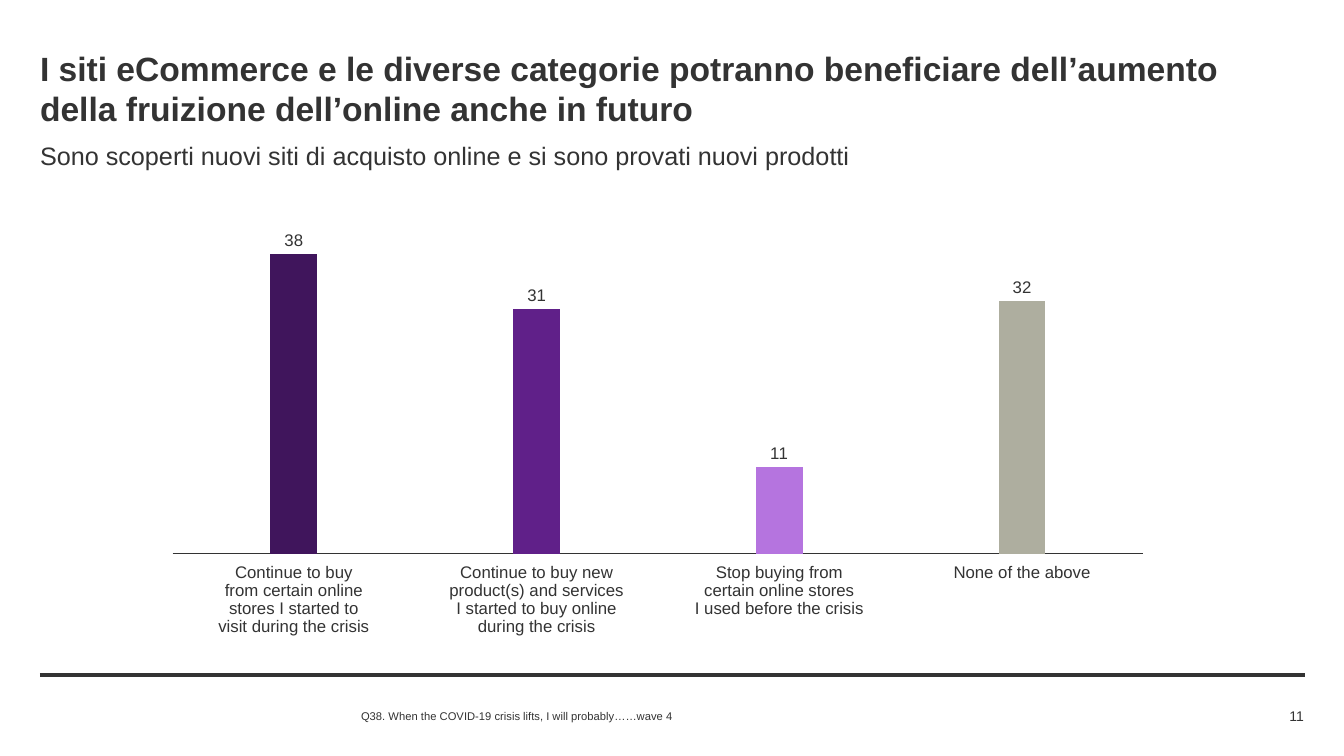
"""Build the slide on how online shopping habits may last after the crisis."""
from lxml.etree import SubElement
from pptx import Presentation
from pptx.chart.data import CategoryChartData
from pptx.dml.color import RGBColor
from pptx.enum.chart import XL_CHART_TYPE as ChartType, XL_LABEL_POSITION as LabelPosition
from pptx.enum.chart import XL_TICK_LABEL_POSITION as TickLabels, XL_TICK_MARK as TickMark
from pptx.enum.shapes import MSO_CONNECTOR as Connector
from pptx.enum.text import MSO_ANCHOR as Anchor, MSO_AUTO_SIZE as AutoSize, PP_ALIGN as Align
from pptx.oxml import parse_xml
from pptx.oxml.ns import nsdecls, qn
from pptx.util import Emu, Pt

THEME = {
    "font": "Arial",
    "ink": RGBColor.from_string("333333"),
    "series": RGBColor.from_string("802AB7"),
    "bars": ["40155C", "602089", "B574DF", "AEAE9F"],
    "title": Pt(24), "subtitle": Pt(18), "chart": Pt(12), "number": Pt(10), "note": Pt(8),
}
PX = 914400 / 100.8


def place(*lengths):
    """Turn pixel lengths into EMU."""
    return [Emu(round(length * PX)) for length in lengths]


def write(box, text, size, bold=False, align=Align.LEFT, anchor=Anchor.TOP):
    """Fill a box with one formatted paragraph."""
    frame = box.text_frame
    frame.word_wrap = True
    frame.auto_size = AutoSize.NONE
    frame.vertical_anchor = anchor
    frame.margin_left = frame.margin_top = frame.margin_right = frame.margin_bottom = 0
    para = frame.paragraphs[0]
    para.alignment = align
    span = para.add_run()
    span.text = text
    span.font.name, span.font.size = THEME["font"], THEME[size]
    span.font.bold, span.font.color.rgb = bold, THEME["ink"]


deck = Presentation()
deck.slide_width, deck.slide_height = place(1344, 756)
page = deck.slides.add_slide(deck.slide_layouts[5])
shapes = page.shapes

rule = shapes.add_connector(Connector.STRAIGHT, *place(40, 675, 1305, 675))
rule.line.color.rgb, rule.line.width = THEME["ink"], Pt(3)
SubElement(rule._element.spPr, qn("a:effectLst"))

title = shapes.title
title.left, title.top, title.width, title.height = place(40, 48, 1264, 80)
write(title, "I siti eCommerce e le diverse categorie potranno beneficiare dell’aumento "
      "della fruizione dell’online anche in futuro", "title", bold=True)

subtitle = shapes.add_textbox(*place(40, 140, 1236, 30))
write(subtitle, "Sono scoperti nuovi siti di acquisto online e si sono provati nuovi prodotti",
      "subtitle")

answers = CategoryChartData(number_format="0")
answers.categories = [
    "Continue to buy\nfrom certain online\nstores I started to\nvisit during the crisis",
    "Continue to buy new\nproduct(s) and services\nI started to buy online\nduring the crisis",
    "Stop buying from\ncertain online stores\nI used before the crisis",
    "None of the above",
]
answers.add_series("Series 1", [38, 31, 11, 32])
chart = shapes.add_chart(ChartType.COLUMN_CLUSTERED, *place(172, 185, 972, 494), answers).chart
chart.has_legend = chart.has_title = False
chart.font.name, chart.font.size = THEME["font"], THEME["chart"]
chart.font.color.rgb = THEME["ink"]

axis = chart.category_axis
axis.major_tick_mark = axis.minor_tick_mark = TickMark.NONE
axis.tick_label_position = TickLabels.LOW
axis.format.line.color.rgb, axis.format.line.width = THEME["ink"], Pt(0.75)
scale = chart.value_axis
scale.minimum_scale, scale.maximum_scale = 0, 40
scale.has_major_gridlines = scale.visible = False

plot = chart.plots[0]
plot.gap_width, plot.overlap, plot.vary_by_categories = 420, -45, False
series = plot.series[0]
series.format.fill.solid()
series.format.fill.fore_color.rgb = THEME["series"]
for index, color in enumerate(THEME["bars"]):
    fill = series.points[index].format.fill
    fill.solid()
    fill.fore_color.rgb = RGBColor.from_string(color)

labels = series.data_labels
labels.show_value, labels.position = True, LabelPosition.OUTSIDE_END
labels.number_format, labels.number_format_is_linked = "0", False
labels.font.name, labels.font.size = THEME["font"], THEME["chart"]
labels.font.color.rgb = THEME["ink"]

area = chart._chartSpace.chart.plotArea
for layout in area.findall(qn("c:layout")):
    area.remove(layout)
area.insert(0, parse_xml(
    f'<c:layout {nsdecls("c")}><c:manualLayout><c:layoutTarget val="inner"/>'
    '<c:xMode val="edge"/><c:yMode val="edge"/><c:x val="0"/><c:y val="0.107"/>'
    '<c:w val="1"/><c:h val="0.64"/></c:manualLayout></c:layout>'))

note = shapes.add_textbox(*place(361, 705, 827, 22))
write(note, "Q38. When the COVID-19 crisis lifts, I will probably……wave 4", "note",
      anchor=Anchor.MIDDLE)
number = shapes.add_textbox(*place(1197, 705, 107, 22))
write(number, "11", "number", align=Align.RIGHT, anchor=Anchor.MIDDLE)

deck.save("out.pptx")
